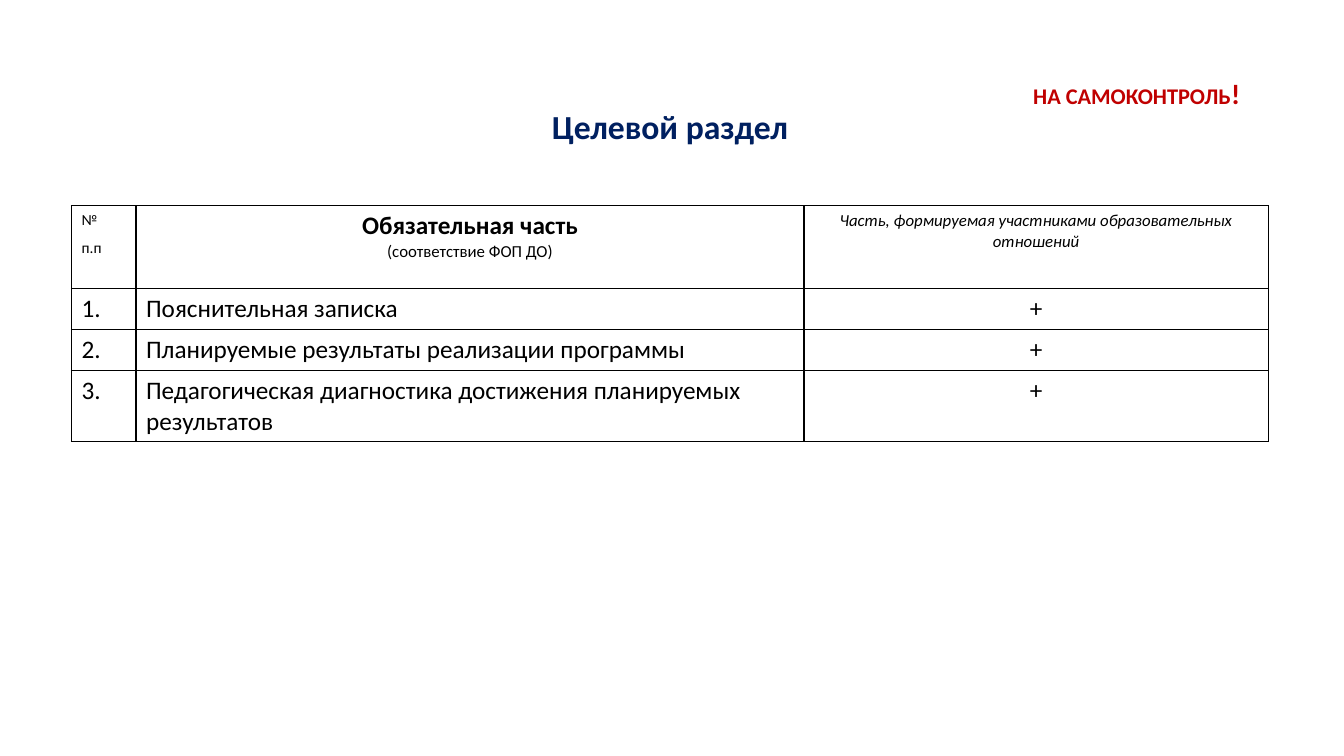
import pptx
import pptx.dml.color
import pptx.enum.text
import pptx.oxml
import pptx.oxml.ns
import pptx.util

BLACK = pptx.dml.color.RGBColor(0x00, 0x00, 0x00)
WHITE = pptx.dml.color.RGBColor(0xFF, 0xFF, 0xFF)
RED = pptx.dml.color.RGBColor(0xC0, 0x00, 0x00)
NAVY = pptx.dml.color.RGBColor(0x00, 0x20, 0x60)
LEFT = pptx.enum.text.PP_ALIGN.LEFT
CENTER = pptx.enum.text.PP_ALIGN.CENTER
RIGHT = pptx.enum.text.PP_ALIGN.RIGHT
WIDTH, HEIGHT = 13.33, 7.5
BORDER = (
    '<a:{side} {ns} w="12700"><a:solidFill><a:srgbClr val="{color}"/>'
    '</a:solidFill><a:prstDash val="solid"/></a:{side}>'
)


class SlideBuilder:
    """Holds the text style and the current slide, and places elements by shares of its size."""

    def __init__(self, deck, font="Calibri"):
        self.deck = deck
        self.font = font
        self.slide = deck.slides.add_slide(deck.slide_layouts[6])

    def area(self, left, top, width, height):
        across, down = self.deck.slide_width, self.deck.slide_height
        return [round(share * size) for share, size in
                zip((left, top, width, height), (across, down, across, down))]

    def add_span(self, para, text, size, color=BLACK, bold=False, italic=False):
        span = para.add_run()
        span.text = text
        span.font.name = self.font
        span.font.size = pptx.util.Pt(size)
        span.font.color.rgb = color
        span.font.bold = bold
        span.font.italic = italic

    def fill_frame(self, frame, lines, aligns, line_spacing=1.0, gap=0):
        for index, (spans, align) in enumerate(zip(lines, aligns)):
            para = frame.add_paragraph() if index else frame.paragraphs[0]
            para.alignment = align
            para.line_spacing = line_spacing
            para.space_before = pptx.util.Pt(gap if index else 0)
            for span in spans:
                self.add_span(para, **span)

    def text(self, place, lines, aligns, inset):
        box = self.slide.shapes.add_textbox(*self.area(*place))
        frame = box.text_frame
        frame.word_wrap = True
        frame.vertical_anchor = pptx.enum.text.MSO_ANCHOR.MIDDLE
        frame.margin_left = frame.margin_right = pptx.util.Inches(inset)
        self.fill_frame(frame, lines, aligns, line_spacing=0.9)

    def table(self, place, column_shares, row_shares, rows):
        area = self.area(*place)
        grid = self.slide.shapes.add_table(len(rows), len(column_shares), *area).table
        for column, share in zip(grid.columns, column_shares):
            column.width = round(area[2] * share)
        for row, share in zip(grid.rows, row_shares):
            row.height = round(area[3] * share)
        for row, contents in zip(grid.rows, rows):
            for cell, content in zip(row.cells, contents):
                self.frame_cell(cell)
                self.fill_frame(cell.text_frame, **content)

    def frame_cell(self, cell):
        properties = cell._tc.get_or_add_tcPr()
        for side in ("lnL", "lnR", "lnT", "lnB"):
            border = BORDER.format(side=side, ns=pptx.oxml.ns.nsdecls("a"), color=BLACK)
            properties.append(pptx.oxml.parse_xml(border))
        cell.fill.solid()
        cell.fill.fore_color.rgb = WHITE


def body_cell(text, align=LEFT):
    return dict(lines=[[dict(text=text, size=18)]], aligns=[align])


def main():
    deck = pptx.Presentation()
    deck.slide_width = pptx.util.Inches(WIDTH)
    deck.slide_height = pptx.util.Inches(HEIGHT)
    builder = SlideBuilder(deck)

    left, width = 0.71 / WIDTH, 11.87 / WIDTH
    reminder = [dict(text="НА САМОКОНТРОЛЬ", size=16, color=RED, bold=True),
                dict(text="!", size=20, color=RED, bold=True)]
    heading = [dict(text="Целевой раздел", size=24, color=NAVY, bold=True)]
    builder.text((left, 0.4 / HEIGHT, width, 1.45 / HEIGHT),
                 [reminder, heading], [RIGHT, CENTER], inset=0.28)

    header = [
        dict(lines=[[dict(text="№", size=11)], [dict(text="п.п", size=11)]],
             aligns=[LEFT, LEFT], gap=6.5),
        dict(lines=[[dict(text="Обязательная часть", size=18, bold=True)],
                    [dict(text="(соответствие ФОП ДО)", size=12)]],
             aligns=[CENTER, CENTER]),
        dict(lines=[[dict(text="Часть, формируемая участниками образовательных отношений",
                          size=12, italic=True)]], aligns=[CENTER]),
    ]
    topics = [
        "Пояснительная записка",
        "Планируемые результаты реализации программы",
        "Педагогическая диагностика достижения планируемых результатов",
    ]
    body = [[body_cell(f"{number}."), body_cell(topic), body_cell("+", CENTER)]
            for number, topic in enumerate(topics, 1)]
    table_height = 2.34
    columns = [inches / 11.88 for inches in (0.64, 6.63, 4.61)]
    rows = [inches / table_height for inches in (0.82, 0.41, 0.41, 0.7)]
    builder.table((left, 2.04 / HEIGHT, width, table_height / HEIGHT),
                  columns, rows, [header] + body)

    deck.save("out.pptx")


if __name__ == "__main__":
    main()
